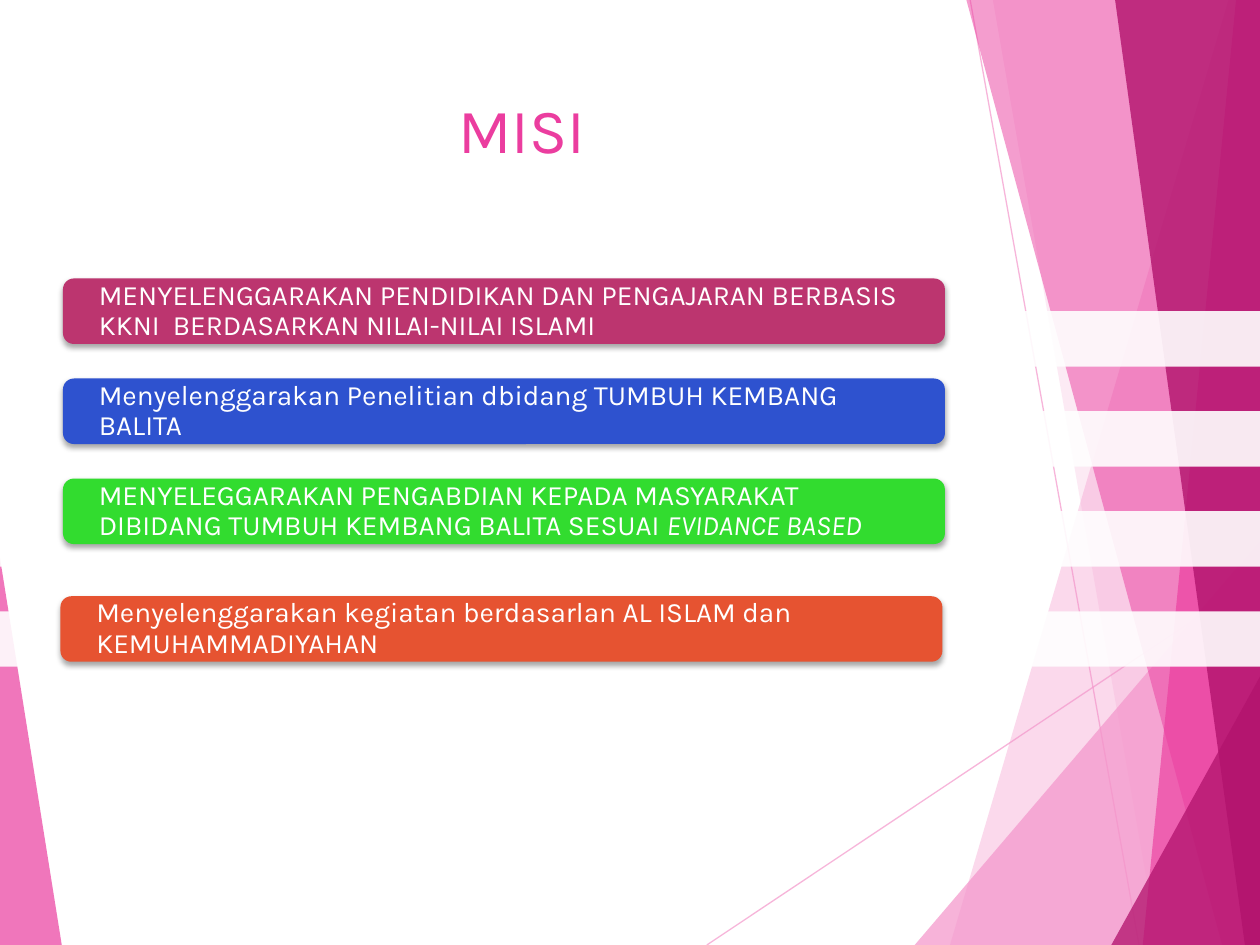
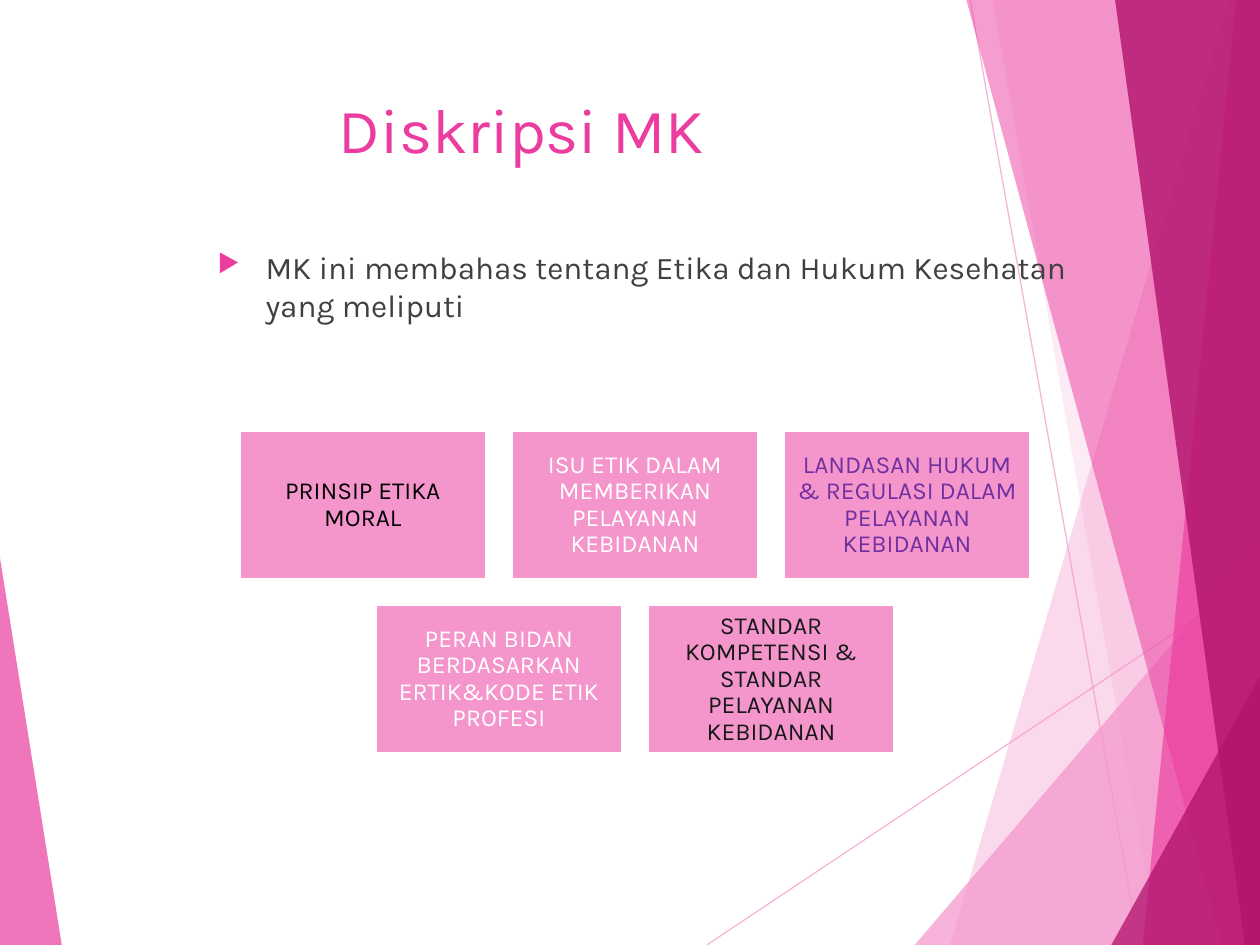
"""Builds two slides: the mission list and the course description."""
from lxml import etree
from pptx import Presentation, util as u
from pptx.dml import color
from pptx.enum import shapes, text
from pptx.oxml import ns

WIDE, HIGH = 10, 7.5
FONT = "Karla"
PINK, ROSE, WINE = "F496CB", "EB3D9F", "B2136D"
WHITE, GREY = "FFFFFF", "404040"

RAYS = [((5.61, HIGH), (WIDE, 4.57)), ((7.7, 0), (9.04, HIGH))]
SHARDS = [
    (PINK, 36, [(9.75, 0), (7.54, HIGH), (WIDE, HIGH), (WIDE, 0)]),
    (PINK, 20, [(7.88, 0), (9.19, HIGH), (WIDE, HIGH), (WIDE, 0)]),
    (PINK, 72, [(7.26, HIGH), (WIDE, 4.29), (WIDE, HIGH)]),
    (ROSE, 50, [(7.67, 0), (9.7, HIGH), (WIDE, HIGH), (WIDE, 0)]),
    (ROSE, 66, [(9.81, 0), (9.07, HIGH), (WIDE, HIGH), (WIDE, 0)]),
    (WINE, 80, [(8.85, 0), (9.88, HIGH), (WIDE, HIGH), (WIDE, 0)]),
    (WINE, 76, [(8.82, HIGH), (WIDE, 5.37), (WIDE, HIGH)]),
    (ROSE, 70, [(0, 4.43), (0.49, HIGH), (0, HIGH)]),
]

GOALS = [
    ("BC356F", (0, 0), ["MENYELENGGARAKAN PENDIDIKAN DAN PENGAJARAN BERBASIS "
                        "KKNI  BERDASARKAN NILAI-NILAI ISLAMI"]),
    ("2E52CF", (0, 0), ["Menyelenggarakan Penelitian dbidang TUMBUH KEMBANG BALITA"]),
    ("32DC2F", (0, 0), ["MENYELEGGARAKAN PENGABDIAN KEPADA MASYARAKAT DIBIDANG "
                        "TUMBUH KEMBANG BALITA SESUAI ", "EVIDANCE BASED"]),
    ("E65331", (-0.02, 0.14), ["Menyelenggarakan kegiatan berdasarlan AL ISLAM dan "
                               "KEMUHAMMADIYAHAN"]),
]

INTRO = "MK ini membahas tentang Etika dan Hukum Kesehatan yang meliputi"
TOPICS = [
    [("PRINSIP ETIKA MORAL", "000000"),
     ("ISU ETIK DALAM MEMBERIKAN PELAYANAN KEBIDANAN", WHITE),
     ("LANDASAN HUKUM & REGULASI DALAM PELAYANAN KEBIDANAN", "7030A0")],
    [("PERAN BIDAN BERDASARKAN ERTIK&KODE ETIK PROFESI", WHITE),
     ("STANDAR KOMPETENSI & STANDAR PELAYANAN KEBIDANAN", "181818")],
]


def paint(fmt, tone, alpha=100):
    """Makes a fill solid, see-through if asked."""
    fmt.solid()
    fmt.fore_color.rgb = color.RGBColor.from_string(tone)
    if alpha < 100:
        clr = fmt.fore_color._xFill[0]
        etree.SubElement(clr, ns.qn("a:alpha")).set("val", str(alpha * 1000))


def block(slide, kind, area, tone, alpha=100):
    """Adds a filled preset shape without line or shadow."""
    shape = slide.shapes.add_shape(kind, *map(u.Inches, area))
    shape.shadow.inherit = False
    paint(shape.fill, tone, alpha)
    shape.line.fill.background()
    return shape


def write(shape, parts, size, tone, align, anchor, pads=(0.1, 0.05), lead=None):
    """Sets one paragraph of text; parts after the first are italic."""
    frame = shape.text_frame
    frame.word_wrap = True
    frame.vertical_anchor = anchor
    frame.margin_left = frame.margin_right = u.Inches(pads[0])
    frame.margin_top = frame.margin_bottom = u.Inches(pads[1])
    para = frame.paragraphs[0]
    para.alignment = align
    para.line_spacing = lead
    for i, part in enumerate(parts):
        run = para.add_run()
        run.text = part
        run.font.name, run.font.size = FONT, u.Pt(size)
        run.font.italic = i > 0
        paint(run.font.fill, tone)
    return para


def shade(shape):
    """Gives a shape a soft shadow below."""
    glow = etree.SubElement(shape._element.spPr.find(ns.qn("a:effectLst")),
                            ns.qn("a:outerShdw"), blurRad=str(u.Pt(3)),
                            dist=str(u.Pt(2)), dir="5400000", rotWithShape="0")
    clr = etree.SubElement(glow, ns.qn("a:srgbClr"), val="000000")
    etree.SubElement(clr, ns.qn("a:alpha"), val="35000")


def bullet(para):
    """Gives a paragraph a hanging arrow bullet."""
    props = para._p.get_or_add_pPr()
    props.set("marL", str(u.Inches(0.38)))
    props.set("indent", str(u.Inches(-0.38)))
    clr = etree.SubElement(props, ns.qn("a:buClr"))
    etree.SubElement(clr, ns.qn("a:srgbClr"), val=ROSE)
    etree.SubElement(props, ns.qn("a:buSzPct"), val="80000")
    etree.SubElement(props, ns.qn("a:buChar"), char="▶")


def start(deck, title):
    """Adds a slide with the shared shards and title."""
    slide = deck.slides.add_slide(deck.slide_layouts[6])
    paint(slide.background.fill, WHITE)
    for head, tail in RAYS:
        ray = slide.shapes.add_connector(shapes.MSO_CONNECTOR.STRAIGHT,
                                         *map(u.Inches, head + tail))
        paint(ray.line.fill, PINK, 70)
        ray.line.width = u.Pt(0.75)
        etree.SubElement(ray._element.spPr, ns.qn("a:effectLst"))
    for tone, alpha, spots in SHARDS:
        first, *rest = [tuple(map(u.Inches, spot)) for spot in spots]
        pen = slide.shapes.build_freeform(*first)
        pen.add_line_segments(rest)
        shard = pen.convert_to_shape()
        shard.shadow.inherit = False
        paint(shard.fill, tone, alpha)
        shard.line.fill.background()
    box = slide.shapes.add_textbox(*map(u.Inches, (0.67, 0.67, 6.94, 1.44)))
    write(box, [title], 36, ROSE, text.PP_ALIGN.CENTER, text.MSO_ANCHOR.TOP)
    return slide


def mission(deck):
    """Builds the list of goals."""
    slide = start(deck, "MISI")
    left, top, step = 0.5, 2.21, 0.794
    kinds = shapes.MSO_SHAPE
    for i, (tone, (dx, dy), parts) in enumerate(GOALS):
        y = top + i * step
        block(slide, kinds.RECTANGLE, (0, y + 0.26, WIDE, 0.44), WHITE, 90)
        card = block(slide, kinds.ROUNDED_RECTANGLE,
                     (left + dx, y + dy, 7, 0.52), tone)
        shade(card)
        write(card, parts, 16, WHITE, text.PP_ALIGN.LEFT,
              text.MSO_ANCHOR.MIDDLE, (0.26, 0), 0.9)


def course(deck):
    """Builds the centred rows of topics."""
    slide = start(deck, "Diskripsi MK")
    box = slide.shapes.add_textbox(*map(u.Inches, (1.63, 1.92, 6.94, 4.24)))
    para = write(box, [INTRO], 18, GREY, text.PP_ALIGN.LEFT, text.MSO_ANCHOR.TOP)
    para.space_before = u.Pt(10)
    bullet(para)
    wide, high, gap, mid, top = 1.96, 1.18, 0.2, 5.04, 3.42
    for i, row in enumerate(TOPICS):
        left = mid - (len(row) * (wide + gap) - gap) / 2
        for j, (topic, tone) in enumerate(row):
            area = left + j * (wide + gap), top + i * (high + gap), wide, high
            tile = block(slide, shapes.MSO_SHAPE.RECTANGLE, area, PINK)
            paint(tile.line.fill, WHITE)
            tile.line.width = u.Pt(1.5)
            write(tile, [topic], 14, tone, text.PP_ALIGN.CENTER,
                  text.MSO_ANCHOR.MIDDLE, (0.06, 0.06), 0.9)


def main():
    """Builds and saves the deck."""
    deck = Presentation()
    deck.slide_width, deck.slide_height = u.Inches(WIDE), u.Inches(HIGH)
    mission(deck)
    course(deck)
    deck.save("out.pptx")


if __name__ == "__main__":
    main()
